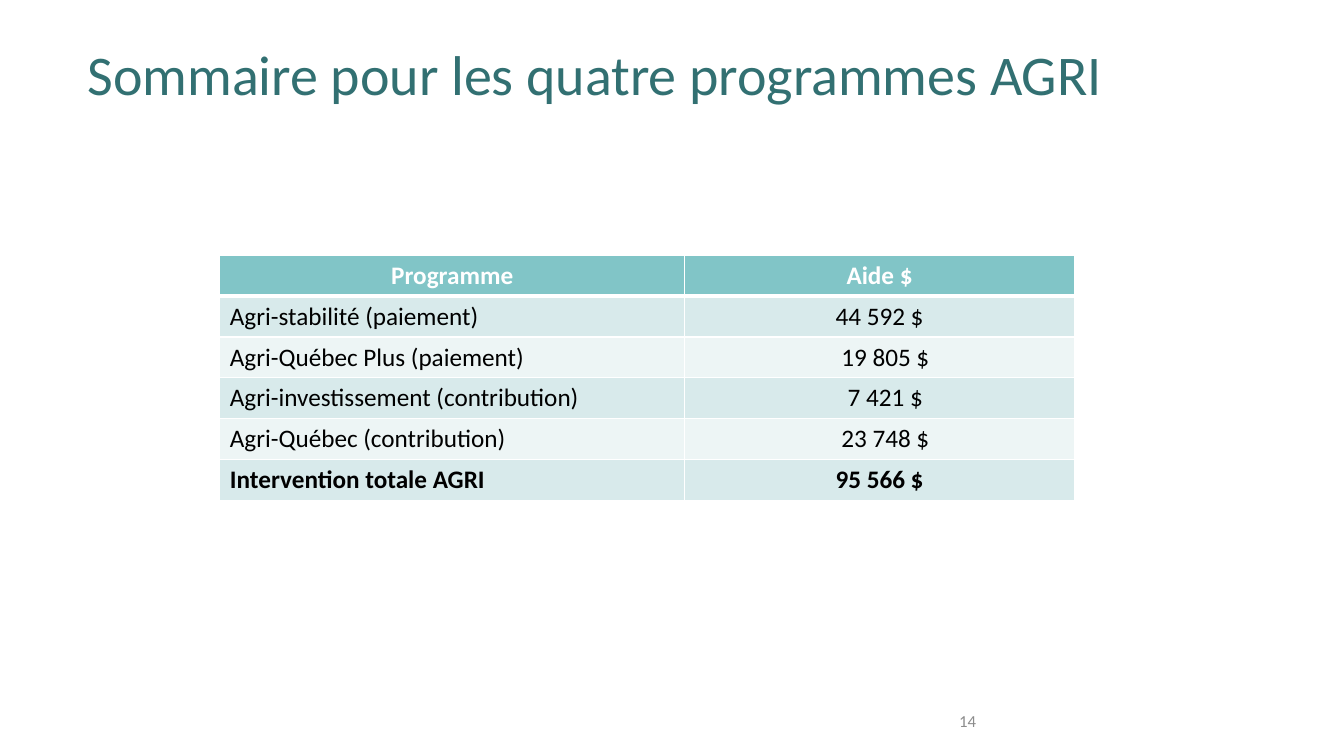
from lxml import etree
from pptx import Presentation
from pptx.dml.color import RGBColor
from pptx.enum.text import MSO_ANCHOR, PP_ALIGN
from pptx.oxml.ns import qn
from pptx.util import Pt

EMU_PER_PX = 9525
TOP, MIDDLE = MSO_ANCHOR.TOP, MSO_ANCHOR.MIDDLE
LEFT, CENTER = PP_ALIGN.LEFT, PP_ALIGN.CENTER

# Each row: programme, amount, extra left indent of the amount in px
ROWS = [
    ("Programme", "Aide $", 0),
    ("Agri-stabilité (paiement)", "44 592 $", 0),
    ("Agri-Québec Plus (paiement)", "19 805 $", 11),
    ("Agri-investissement (contribution)", "7 421 $", 11),
    ("Agri-Québec (contribution)", "23 748 $", 11),
    ("Intervention totale AGRI", "95 566 $", 0),
]


def px(length):
    return length * EMU_PER_PX


def color(value):
    return RGBColor.from_string(value)


class SlideBuilder:
    font = "Calibri"
    header_fill = "81C5C7"
    band_fills = ("EDF5F5", "D8EAEB")
    border = "FFFFFF"
    cell_margin = 10

    def __init__(self, presentation):
        self.slide = presentation.slides.add_slide(presentation.slide_layouts[6])

    def set_text(self, text_frame, text, size, ink, bold=False, align=LEFT):
        text_frame.text = text
        paragraph = text_frame.paragraphs[0]
        paragraph.alignment = align
        font = paragraph.runs[0].font
        font.name, font.size, font.bold = self.font, Pt(size), bold
        font.color.rgb = color(ink)
        return paragraph

    def text(self, left, top, width, height, text, size, ink, anchor=TOP):
        shape = self.slide.shapes.add_textbox(px(left), px(top), px(width), px(height))
        shape.text_frame.word_wrap = True
        shape.text_frame.vertical_anchor = anchor
        return self.set_text(shape.text_frame, text, size, ink)

    def borders(self, cell, top, bottom):
        properties = cell._tc.get_or_add_tcPr()
        for side, points in (("L", 1), ("R", 1), ("T", top), ("B", bottom)):
            line = etree.SubElement(properties, qn(f"a:ln{side}"), w=str(int(Pt(points))))
            fill = etree.SubElement(line, qn("a:solidFill"))
            etree.SubElement(fill, qn("a:srgbClr"), val=self.border)

    def table(self, left, top, widths, row_height, rows):
        frame = self.slide.shapes.add_table(
            len(rows), len(widths), px(left), px(top),
            px(sum(widths)), px(row_height * len(rows)))
        table = frame.table
        for column, width in zip(table.columns, widths):
            column.width = px(width)
        for index, (programme, amount, indent) in enumerate(rows):
            table.rows[index].height = px(row_height)
            header = index == 0
            bold = header or index == len(rows) - 1
            fill = self.header_fill if header else self.band_fills[index % 2]
            for column, text in enumerate((programme, amount)):
                cell = table.cell(index, column)
                # The rule under the header is heavier than the others
                self.borders(cell, 3 if index == 1 else 1, 3 if header else 1)
                cell.fill.solid()
                cell.fill.fore_color.rgb = color(fill)
                cell.margin_left = px(self.cell_margin + indent * column)
                self.set_text(cell.text_frame, text, 18,
                              "FFFFFF" if header else "000000", bold,
                              CENTER if header or column else LEFT)


def main():
    presentation = Presentation()
    presentation.slide_width, presentation.slide_height = px(1280), px(720)
    builder = SlideBuilder(presentation)

    # Title
    title = builder.text(74, 40, 1104, 84,
                         "Sommaire pour les quatre programmes AGRI", 40, "327072")
    title.line_spacing = 0.9

    # Programme table
    builder.table(209, 243, (443, 371), 39, ROWS)

    # Slide number
    builder.text(904, 667, 288, 38, "14", 12, "8C8C8C", MIDDLE)

    presentation.save("out.pptx")


if __name__ == "__main__":
    main()
